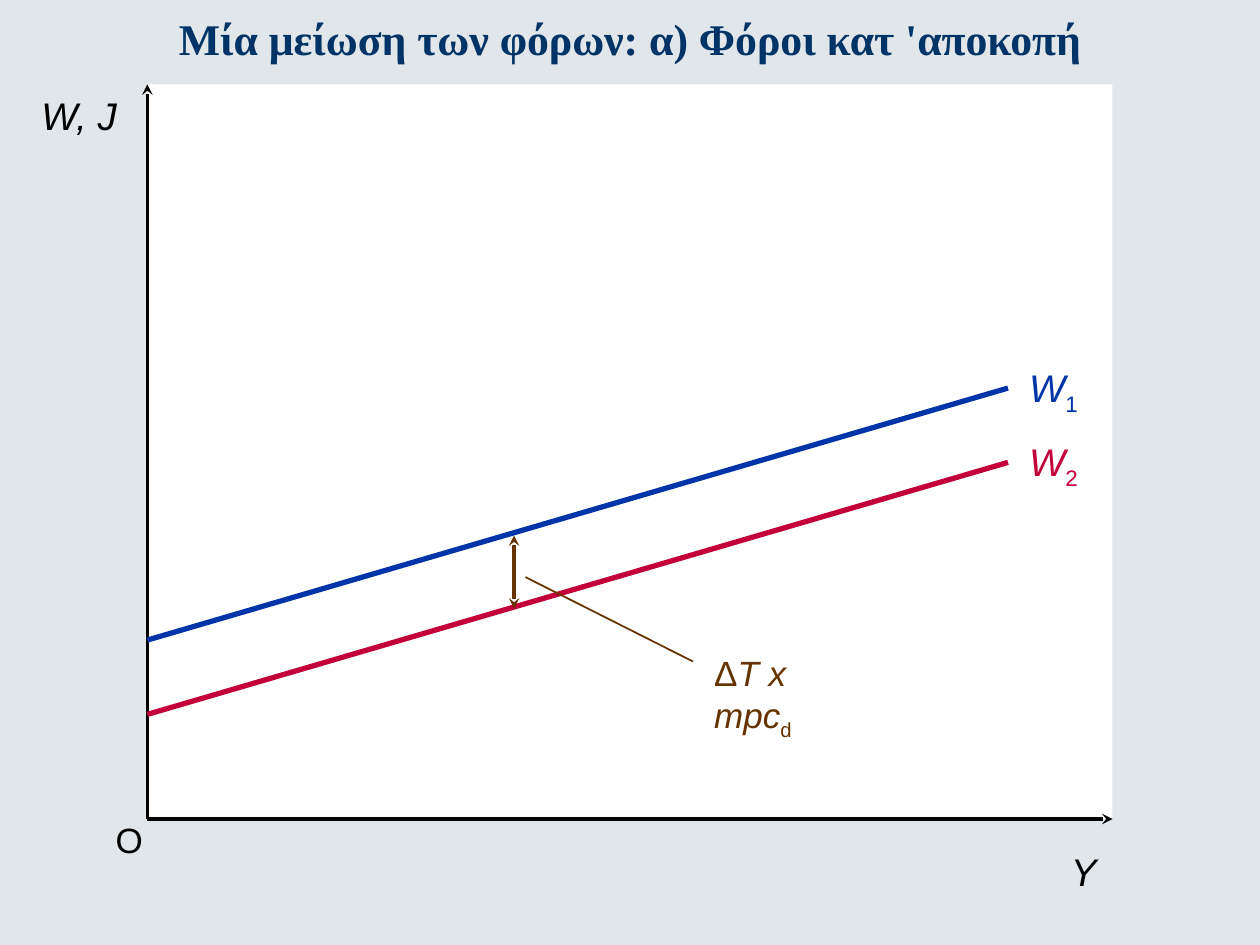
"""Build a slide showing how a lump-sum tax cut shifts the withdrawals line."""
from lxml.etree import SubElement
from pptx import Presentation
from pptx.dml.color import RGBColor
from pptx.enum.shapes import MSO_CONNECTOR, MSO_SHAPE
from pptx.enum.text import MSO_ANCHOR, MSO_AUTO_SIZE, PP_ALIGN
from pptx.oxml import parse_xml
from pptx.oxml.ns import nsdecls, qn
from pptx.util import Inches, Pt

HUES = {"back": "E0E6EA", "plot": "FFFFFF", "axis": "000000", "first": "0035AA",
        "second": "C40038", "gap": "663300", "title": "003366"}


def tint(name):
    return RGBColor.from_string(HUES[name])


def style(run, hue, **form):
    run.font.color.rgb = tint(hue)
    for key, value in form.items():
        setattr(run.font, key, value)


deck = Presentation()
deck.slide_width, deck.slide_height = Inches(10), Inches(7.5)
slide = deck.slides.add_slide(deck.slide_layouts[5])
slide.background.fill.solid()
slide.background.fill.fore_color.rgb = tint("back")

left, top, right, base = 1.17, 0.67, 8.83, 6.5
plot = slide.shapes.add_shape(MSO_SHAPE.RECTANGLE, Inches(left), Inches(top),
                              Inches(right - left), Inches(base - top))
plot.shadow.inherit = False
plot.fill.solid()
plot.fill.fore_color.rgb = tint("plot")
plot.line.fill.background()

lines = [
    (left, top, left, base, "axis", 2, ["headEnd"]),
    (left, base, right, base, "axis", 2, ["tailEnd"]),
    (left, 5.08, 8, 3.08, "first", 3, []),
    (left, 5.67, 8, 3.67, "second", 3, []),
    (4.08, 4.25, 4.08, 4.83, "gap", 2, ["headEnd", "tailEnd"]),
    (4.17, 4.58, 5.5, 5.25, "gap", 1, []),
]
for x1, y1, x2, y2, hue, width, tips in lines:
    line = slide.shapes.add_connector(MSO_CONNECTOR.STRAIGHT, Inches(x1), Inches(y1),
                                      Inches(x2), Inches(y2))
    line.line.color.rgb = tint(hue)
    line.line.width = Pt(width)
    for tip in tips:
        SubElement(line.line._get_or_add_ln(), qn(f"a:{tip}"), type="stealth")
    SubElement(line._element.spPr, qn("a:effectLst"))

labels = [
    (0.82, 6.45, 0.42, 0.43, "axis", 20, [("O", "plain")]),
    (0.23, 0.68, 0.81, 0.47, "axis", 22, [("W, J", "italic")]),
    (8.4, 6.68, 0.4, 0.47, "axis", 22, [("Y", "italic")]),
    (8.07, 2.84, 0.61, 0.47, "first", 22, [("W", "italic"), ("1", "sub")]),
    (8.07, 3.43, 0.61, 0.47, "second", 22, [("W", "italic"), ("2", "sub")]),
    (5.57, 5.12, 1.4, 0.43, "gap", 20, [("Δ", "plain"), ("T x mpc", "italic"), ("d", "sub")]),
]
for x, y, wide, high, hue, size, parts in labels:
    box = slide.shapes.add_textbox(Inches(x), Inches(y), Inches(wide), Inches(high))
    box.text_frame.word_wrap = hue == "gap"
    for text, kind in parts:
        run = box.text_frame.paragraphs[0].add_run()
        run.text = text
        style(run, hue, name="Arial", size=Pt(size), italic=kind == "italic")
        if kind == "sub":
            run.font._element.set("baseline", "-25000")

title = slide.shapes.title
title.left, title.top, title.width, title.height = 0, 0, Inches(10), Inches(0.6)
frame = title.text_frame
for key, value in {"word_wrap": True, "auto_size": MSO_AUTO_SIZE.NONE,
                   "vertical_anchor": MSO_ANCHOR.MIDDLE}.items():
    setattr(frame, key, value)
head = frame.paragraphs[0]
head.alignment = PP_ALIGN.CENTER
run = head.add_run()
run.text = "Μία μείωση των φόρων: α) Φόροι κατ 'αποκοπή"
style(run, "title", name="Times New Roman", size=Pt(25), bold=True)
shade = parse_xml(f'<a:effectLst {nsdecls("a")}><a:outerShdw dist="35921" dir="2700000">'
                  f'<a:srgbClr val="{HUES["axis"]}"/></a:outerShdw></a:effectLst>')
run.font._element.find(qn("a:solidFill")).addnext(shade)

deck.save("out.pptx")
